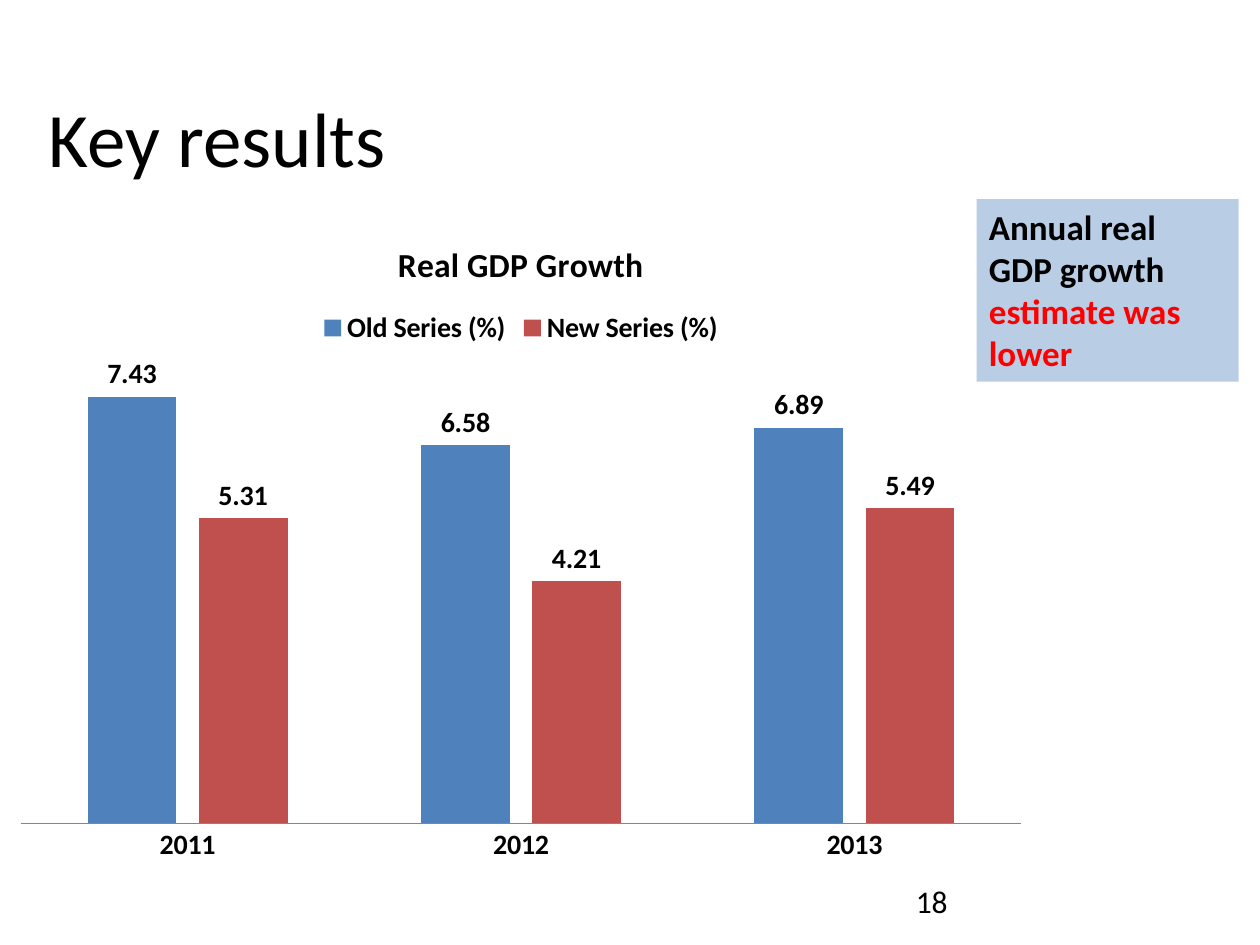
from pptx import Presentation
from pptx.chart.data import CategoryChartData
from pptx.dml.color import RGBColor
from pptx.enum.chart import XL_CHART_TYPE, XL_LABEL_POSITION, XL_LEGEND_POSITION, XL_TICK_MARK
from pptx.enum.shapes import MSO_SHAPE
from pptx.enum.text import MSO_ANCHOR, PP_ALIGN
from pptx.util import Inches, Pt

COLUMNS = XL_CHART_TYPE.COLUMN_CLUSTERED
LEGEND_TOP = XL_LEGEND_POSITION.TOP
ABOVE_BAR = XL_LABEL_POSITION.OUTSIDE_END
NO_TICKS = XL_TICK_MARK.NONE

FONT = "Calibri"
BLACK, RED, PALE_BLUE, AXIS_GREY = "000000", "FF0000", "B9CDE5", "868686"

HEADING = [("Key results", BLACK)]
FINDING = [("Annual real GDP growth ", BLACK), ("estimate was lower", RED)]
PAGE_NUMBER = [("18", BLACK)]
CHART_TITLE = "Real GDP Growth"
YEARS = ["2011", "2012", "2013"]
GROWTH = [
    ("Old Series (%)", "4F81BD", [7.43, 6.58, 6.89]),
    ("New Series (%)", "C0504D", [5.31, 4.21, 5.49]),
]


def color(hex_string):
    return RGBColor.from_string(hex_string)


def inches(*lengths):
    return [Inches(length) for length in lengths]


def style_font(font, size, hex_string, bold):
    font.name = FONT
    font.size = Pt(size)
    font.bold = bold
    font.color.rgb = color(hex_string)


def write(shape, runs, size, bold=False):
    frame = shape.text_frame
    frame.word_wrap = True
    frame.vertical_anchor = MSO_ANCHOR.TOP
    paragraph = frame.paragraphs[0]
    paragraph.alignment = PP_ALIGN.LEFT
    for words, hex_string in runs:
        run = paragraph.add_run()
        run.text = words
        style_font(run.font, size, hex_string, bold)


def add_growth_chart(shapes, box):
    data = CategoryChartData(number_format="0.00")
    data.categories = YEARS
    for name, _, values in GROWTH:
        data.add_series(name, values)
    chart = shapes.add_chart(COLUMNS, *inches(*box), data).chart
    style_font(chart.font, 16, BLACK, True)

    chart.has_title = True
    title_run = chart.chart_title.text_frame.paragraphs[0].add_run()
    title_run.text = CHART_TITLE
    style_font(title_run.font, 19.2, BLACK, True)
    chart.chart_title.include_in_layout = False

    chart.has_legend = True
    chart.legend.position = LEGEND_TOP
    chart.legend.include_in_layout = False

    chart.category_axis.major_tick_mark = NO_TICKS
    chart.category_axis.format.line.color.rgb = color(AXIS_GREY)
    chart.value_axis.visible = False
    chart.value_axis.has_major_gridlines = False
    chart.value_axis.minimum_scale = 0
    chart.value_axis.maximum_scale = 8

    plot = chart.plots[0]
    plot.vary_by_categories = False
    plot.gap_width = 150
    plot.overlap = -25
    for series, (_, hex_string, _) in zip(plot.series, GROWTH):
        series.format.fill.solid()
        series.format.fill.fore_color.rgb = color(hex_string)
        series.invert_if_negative = False
        labels = series.data_labels
        labels.show_value = True
        labels.number_format = "0.00"
        labels.number_format_is_linked = False
        labels.position = ABOVE_BAR


def main():
    deck = Presentation()
    deck.slide_width, deck.slide_height = inches(10, 7.5)
    shapes = deck.slides.add_slide(deck.slide_layouts[6]).shapes

    add_growth_chart(shapes, (0, 1.7, 8.27, 5.25))
    write(shapes.add_textbox(*inches(0.29, 0.67, 6.82, 0.63)), HEADING, 44)

    callout = shapes.add_shape(MSO_SHAPE.RECTANGLE, *inches(7.75, 1.58, 2.08, 1.45))
    callout.shadow.inherit = False
    callout.fill.solid()
    callout.fill.fore_color.rgb = color(PALE_BLUE)
    callout.line.fill.background()
    write(callout, FINDING, 20, bold=True)

    write(shapes.add_textbox(*inches(7.17, 6.95, 2.33, 0.4)), PAGE_NUMBER, 18)
    deck.save("out.pptx")


if __name__ == "__main__":
    main()
